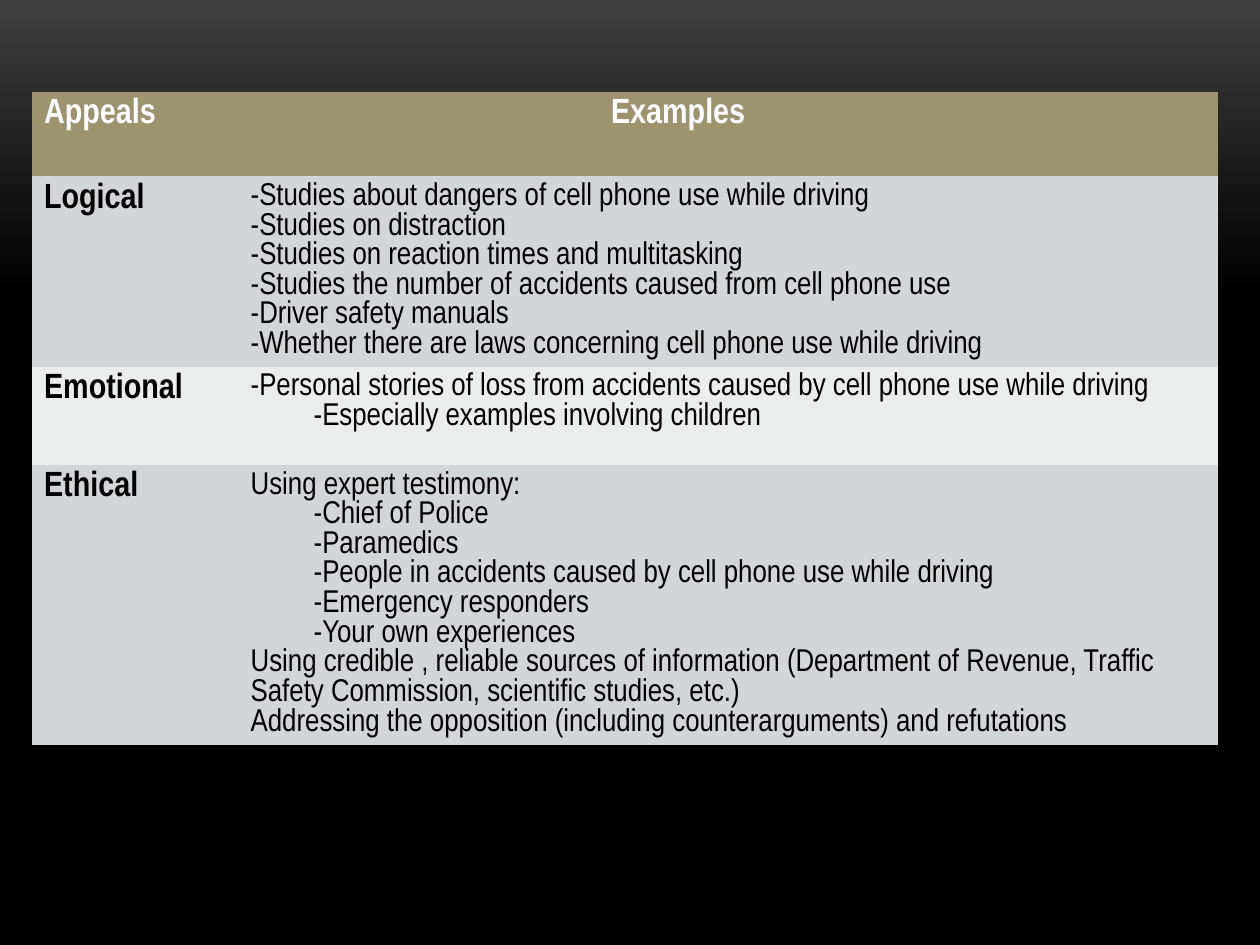
import pptx
import pptx.dml.color
import pptx.util

Inches = pptx.util.Inches
Pt = pptx.util.Pt
RGBColor = pptx.dml.color.RGBColor

CHARCOAL = RGBColor(0x3F, 0x3F, 0x3F)
BLACK = RGBColor(0, 0, 0)
WHITE = RGBColor(0xFF, 0xFF, 0xFF)
KHAKI = RGBColor(0x9D, 0x93, 0x6F)
GREY = RGBColor(0xD3, 0xD6, 0xD7)
PALE_GREY = RGBColor(0xEB, 0xEC, 0xEC)

FONT = "Arial Narrow"
COLUMN_WIDTHS = (1.64, 7.78)
ROW_HEIGHTS = (0.67, 1.51, 0.78, 2.22)
HEADING_INDENT = 2.86
SUBPOINT_INDENT = 0.5

APPEALS = [
    ("Logical", [
        (0, "-Studies about dangers of cell phone use while driving"),
        (0, "-Studies on distraction"),
        (0, "-Studies on reaction times and multitasking"),
        (0, "-Studies the number of accidents caused from cell phone use"),
        (0, "-Driver safety manuals"),
        (0, "-Whether there are laws concerning cell phone use while driving"),
    ]),
    ("Emotional", [
        (0, "-Personal stories of loss from accidents caused by cell phone use while driving"),
        (1, "-Especially examples involving children"),
    ]),
    ("Ethical", [
        (0, "Using expert testimony:"),
        (1, "-Chief of Police"),
        (1, "-Paramedics"),
        (1, "-People in accidents caused by cell phone use while driving"),
        (1, "-Emergency responders"),
        (1, "-Your own experiences"),
        (0, "Using credible , reliable sources of information (Department of Revenue, "
            "Traffic Safety Commission, scientific studies, etc.)"),
        (0, "Addressing the opposition (including counterarguments) and refutations"),
    ]),
]


def paint_background(slide):
    """Fade the slide from charcoal at the top to black."""
    fill = slide.background.fill
    fill.gradient()
    fill.gradient_angle = 270
    for stop, color, position in zip(fill.gradient_stops, (CHARCOAL, BLACK), (0, 0.31)):
        stop.color.rgb = color
        stop.position = position


def write_cell(cell, lines, fill, color, size, bold, indent=SUBPOINT_INDENT):
    """Fill a cell with (level, text) lines, indenting those below level 0."""
    cell.fill.solid()
    cell.fill.fore_color.rgb = fill
    frame = cell.text_frame
    for index, (level, text) in enumerate(lines):
        paragraph = frame.add_paragraph() if index else frame.paragraphs[0]
        if level:
            paragraph.level = level
            properties = paragraph._p.get_or_add_pPr()
            properties.set("marL", str(Inches(indent)))
            properties.set("indent", "0")
        run = paragraph.add_run()
        run.text = text
        run.font.name = FONT
        run.font.size = Pt(size)
        run.font.bold = bold
        run.font.color.rgb = color


def add_appeals_table(slide, left, top):
    """Place the table of appeals and their examples."""
    table = slide.shapes.add_table(
        len(ROW_HEIGHTS), len(COLUMN_WIDTHS), left, top,
        Inches(sum(COLUMN_WIDTHS)), Inches(sum(ROW_HEIGHTS))).table
    for column, width in zip(table.columns, COLUMN_WIDTHS):
        column.width = Inches(width)
    for row, height in zip(table.rows, ROW_HEIGHTS):
        row.height = Inches(height)
    table.first_row = table.horz_banding = False
    tbl_pr = table._tbl.tblPr
    style_id = tbl_pr[0]
    style_id.text = "{2D5ABB26-0587-4C30-8999-92F81FD0307C}"

    write_cell(table.cell(0, 0), [(0, "Appeals")], KHAKI, WHITE, 20, True)
    write_cell(table.cell(0, 1), [(1, "Examples")], KHAKI, WHITE, 20, True, HEADING_INDENT)
    for row, (appeal, examples) in enumerate(APPEALS, start=1):
        band = GREY if row % 2 else PALE_GREY
        write_cell(table.cell(row, 0), [(0, appeal)], band, BLACK, 20, True)
        write_cell(table.cell(row, 1), examples, band, BLACK, 18, False)


def main():
    """Build and save the slide."""
    presentation = pptx.Presentation()
    presentation.slide_width = Inches(10)
    presentation.slide_height = Inches(7.5)
    slide = presentation.slides.add_slide(presentation.slide_layouts[6])
    paint_background(slide)
    add_appeals_table(slide, Inches(0.25), Inches(0.73))
    presentation.save("out.pptx")


if __name__ == "__main__":
    main()
